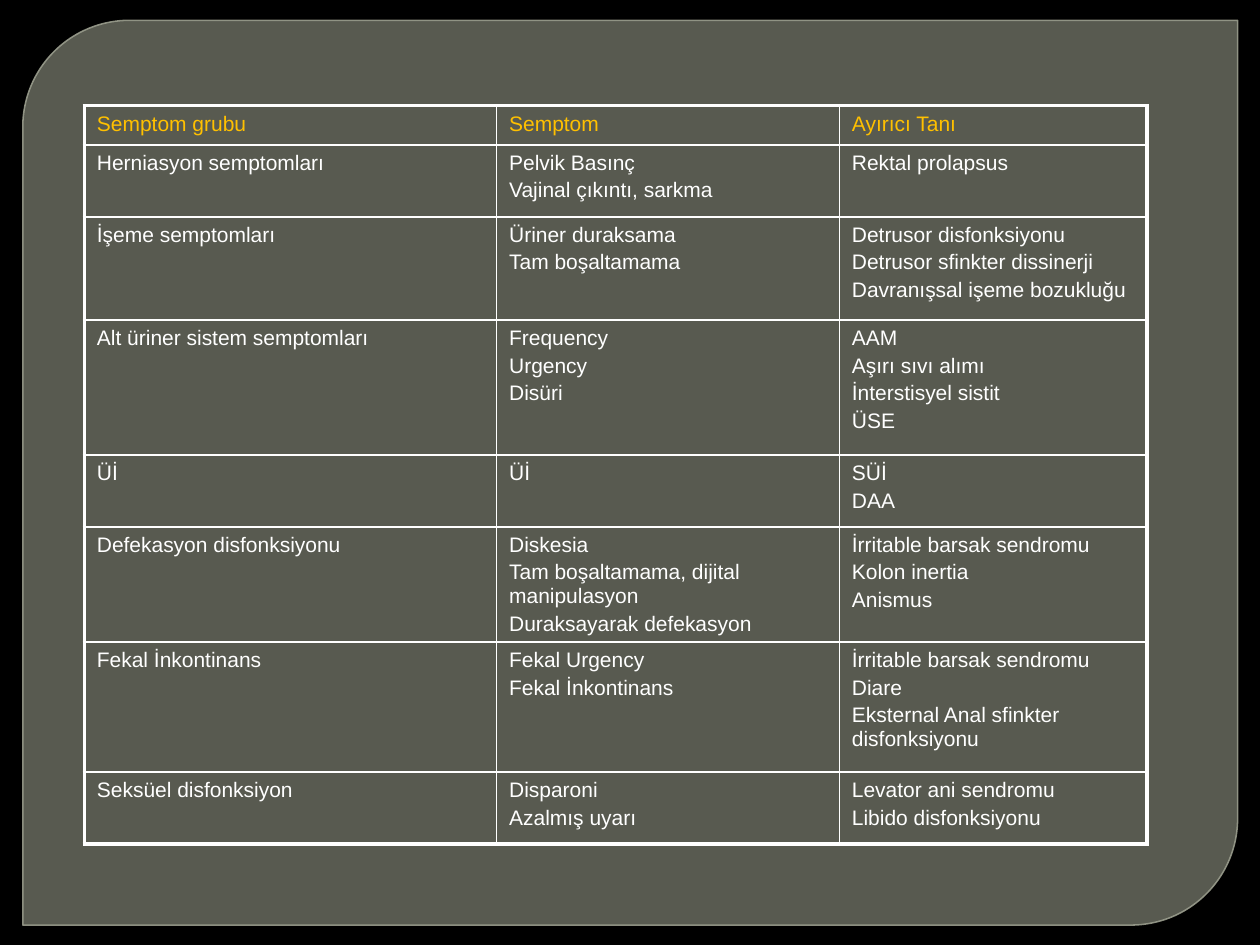
from lxml import etree
from pptx import Presentation
from pptx import util as u
from pptx.dml.color import RGBColor
from pptx.enum import shapes
from pptx.oxml import ns

COLORS = {
    "background": "000000",
    "panel": "888B7B",
    "panel line": "9DA090",
    "header": "FFC000",
    "text": "FFFFFF",
    "border": "FFFFFF",
}
FONT = "Arial"
OUTER, INNER = 2.25, 1  # border widths in points

HEADER = ("Semptom grubu", "Semptom", "Ayırıcı Tanı")
# Height in cm, then the lines of each cell
SYMPTOMS = [
    (1.45, ["Herniasyon semptomları"],
     ["Pelvik Basınç", "Vajinal çıkıntı, sarkma"],
     ["Rektal prolapsus"]),
    (2.08, ["İşeme semptomları"],
     ["Üriner duraksama", "Tam boşaltamama"],
     ["Detrusor disfonksiyonu", "Detrusor sfinkter dissinerji",
      "Davranışsal işeme bozukluğu"]),
    (2.72, ["Alt üriner sistem semptomları"],
     ["Frequency", "Urgency", "Disüri"],
     ["AAM", "Aşırı sıvı alımı", "İnterstisyel sistit", "ÜSE"]),
    (1.45, ["Üİ"], ["Üİ"], ["SÜİ", "DAA"]),
    (2.31, ["Defekasyon disfonksiyonu"],
     ["Diskesia", "Tam boşaltamama, dijital manipulasyon",
      "Duraksayarak defekasyon"],
     ["İrritable barsak sendromu", "Kolon inertia", "Anismus"]),
    (2.62, ["Fekal İnkontinans"],
     ["Fekal Urgency", "Fekal İnkontinans"],
     ["İrritable barsak sendromu", "Diare",
      "Eksternal Anal sfinkter disfonksiyonu"]),
    (1.45, ["Seksüel disfonksiyon"],
     ["Disparoni", "Azalmış uyarı"],
     ["Levator ani sendromu", "Libido disfonksiyonu"]),
]


def color(name):
    return RGBColor.from_string(COLORS[name])


def set_alpha(fill_parent, percent):
    """Make the solid colour inside an element partly transparent."""
    value = fill_parent.find(ns.qn("a:solidFill")).find(ns.qn("a:srgbClr"))
    etree.SubElement(value, ns.qn("a:alpha")).set("val", str(percent * 1000))


def write_lines(frame, lines, *, size=12, tint="text", before=2.4):
    """Write one paragraph for each line."""
    for index, line in enumerate(lines):
        para = frame.add_paragraph() if index else frame.paragraphs[0]
        para.space_before = u.Pt(before)
        span = para.add_run()
        span.text = line
        span.font.name = FONT
        span.font.size = u.Pt(size)
        span.font.color.rgb = color(tint)


def set_borders(cell, widths):
    """Draw the left, right, top and bottom borders of a cell."""
    properties = cell._tc.get_or_add_tcPr()
    for index, (side, width) in enumerate(zip("LRTB", widths)):
        line = etree.Element(ns.qn(f"a:ln{side}"), w=str(u.Pt(width)))
        fill = etree.SubElement(line, ns.qn("a:solidFill"))
        etree.SubElement(fill, ns.qn("a:srgbClr"), val=COLORS["border"])
        properties.insert(index, line)


def add_panel(page, box):
    """Panel with two rounded corners behind the table."""
    panel = page.shapes.add_shape(
        shapes.MSO_SHAPE.ROUND_2_DIAG_RECTANGLE, *map(u.Cm, box))
    panel.adjustments[0] = 0.118
    panel.adjustments[1] = 0
    panel.shadow.inherit = False
    panel.fill.solid()
    panel.fill.fore_color.rgb = color("panel")
    panel.line.color.rgb = color("panel line")
    panel.line.width = u.Pt(0.87)
    properties = panel._element.spPr
    set_alpha(properties, 65)
    set_alpha(properties.find(ns.qn("a:ln")), 88)


def add_symptom_table(page, left, top, col_widths):
    """Table of symptom groups, symptoms and differential diagnoses."""
    rows = [(0.79, *([title] for title in HEADER)), *SYMPTOMS]
    height = sum(row[0] for row in rows)
    table = page.shapes.add_table(
        len(rows), len(col_widths), u.Cm(left), u.Cm(top),
        u.Cm(sum(col_widths)), u.Cm(height)).table
    table.first_row = table.horz_banding = False
    for column, width in zip(table.columns, col_widths):
        column.width = u.Cm(width)

    last_row, last_col = len(rows) - 1, len(col_widths) - 1
    for r, (row_height, *cells) in enumerate(rows):
        table.rows[r].height = u.Cm(row_height)
        for c, lines in enumerate(cells):
            cell = table.cell(r, c)
            cell.fill.background()
            edges = (c == 0, c == last_col, r == 0, r == last_row)
            set_borders(cell, [OUTER if edge else INNER for edge in edges])
            write_lines(cell.text_frame, lines,
                        tint="text" if r else "header")


def main():
    deck = Presentation()
    deck.slide_width, deck.slide_height = u.Cm(25.4), u.Cm(19.05)
    page = deck.slides.add_slide(deck.slide_layouts[6])
    page.background.fill.solid()
    page.background.fill.fore_color.rgb = color("background")
    add_panel(page, (0.46, 0.41, 24.49, 18.24))
    add_symptom_table(page, 1.7, 2.13, (8.31, 6.91, 6.2))
    deck.save("out.pptx")


if __name__ == "__main__":
    main()
